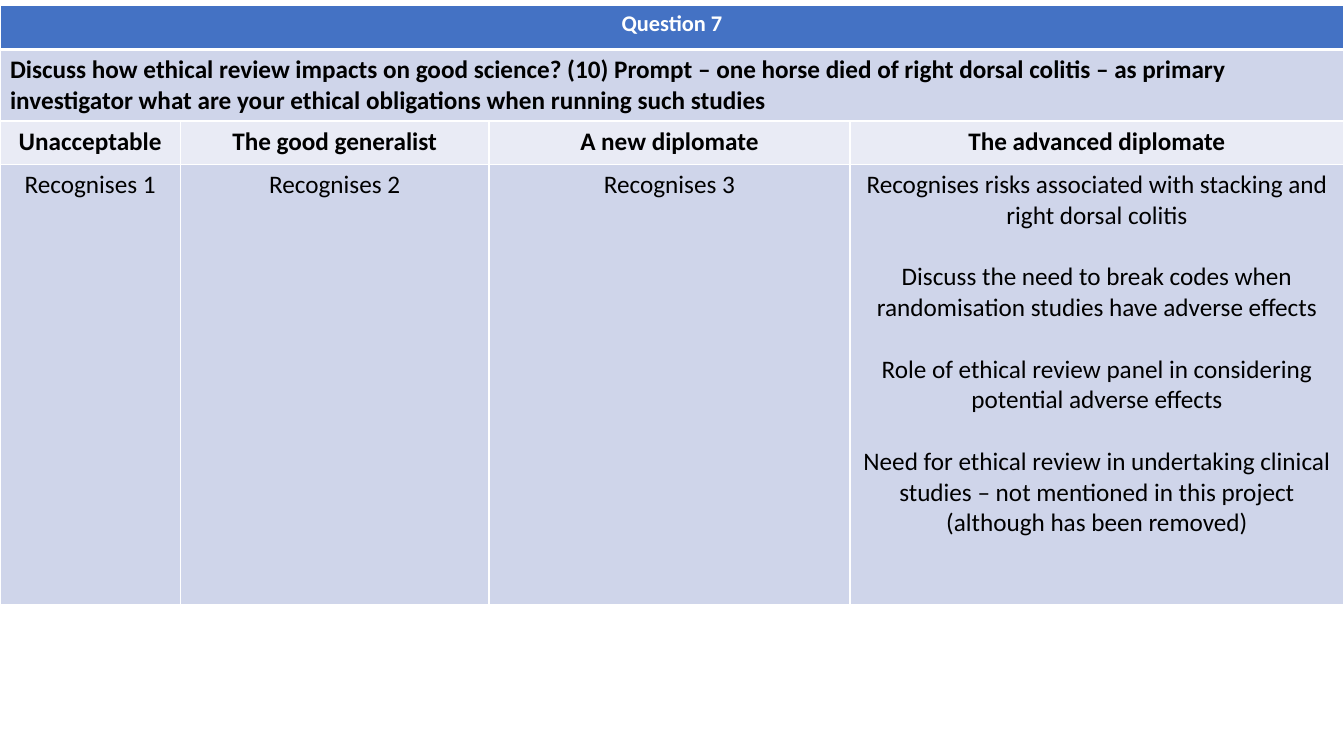
from dataclasses import dataclass

from lxml.etree import SubElement
from pptx import Presentation
from pptx.dml.color import RGBColor
from pptx.enum.text import PP_ALIGN as Align
from pptx.oxml.ns import qn
from pptx.table import _Cell as Cell
from pptx.util import Inches, Pt

COLUMN_WIDTHS = (1.79, 3.06, 3.58, 4.9)
PARAGRAPH_GAP = Pt(22)


@dataclass(frozen=True)
class RubricRow:
    height: float
    fill: str
    cells: tuple[tuple[str, ...], ...]
    size: int = 18
    bold: bool = True
    color: str = "000000"
    align: Align = Align.CENTER
    top_line: int = 1
    bottom_line: int = 1


ROWS = (
    RubricRow(0.44, "4472C4", (("Question 7",),), size=16, color="FFFFFF", bottom_line=3),
    RubricRow(
        0.71, "CFD5EA",
        (("Discuss how ethical review impacts on good science? (10) Prompt – one horse died of "
          "right dorsal colitis – as primary investigator what are your ethical obligations "
          "when running such studies",),),
        align=Align.LEFT, top_line=3,
    ),
    RubricRow(
        0.43, "E9EBF5",
        (("Unacceptable",), ("The good generalist",), ("A new diplomate",),
         ("The advanced diplomate",)),
    ),
    RubricRow(
        4.37, "CFD5EA",
        (("Recognises 1",), ("Recognises 2",), ("Recognises 3",),
         ("Recognises risks associated with stacking and right dorsal colitis",
          "Discuss the need to break codes when randomisation studies have adverse effects",
          "Role of ethical review panel in considering potential adverse effects",
          "Need for ethical review in undertaking clinical studies – not mentioned in this "
          "project (although has been removed)")),
        bold=False,
    ),
)


def rgb(value: str) -> RGBColor:
    return RGBColor.from_string(value)


def style_cell(cell: Cell, row: RubricRow) -> None:
    """Give the cell white borders and the fill of its row."""
    properties = cell._tc.get_or_add_tcPr()
    borders = {"lnL": 1, "lnR": 1, "lnT": row.top_line, "lnB": row.bottom_line}
    for tag, points in borders.items():
        line = SubElement(properties, qn(f"a:{tag}"), w=str(Pt(points)))
        SubElement(SubElement(line, qn("a:solidFill")), qn("a:srgbClr"), val="FFFFFF")
    cell.fill.solid()
    cell.fill.fore_color.rgb = rgb(row.fill)


def write_cell(cell: Cell, paragraphs: tuple[str, ...], row: RubricRow) -> None:
    font_values = {"name": "Calibri", "size": Pt(row.size), "bold": row.bold}
    frame = cell.text_frame
    for index, text in enumerate(paragraphs):
        para = frame.add_paragraph() if index else frame.paragraphs[0]
        para.alignment = row.align
        if index:
            para.space_before = PARAGRAPH_GAP
        span = para.add_run()
        span.text = text
        for name, value in font_values.items():
            setattr(span.font, name, value)
        span.font.color.rgb = rgb(row.color)


def main() -> None:
    deck = Presentation()
    deck.slide_width, deck.slide_height = Inches(13.33), Inches(7.5)
    page = deck.slides.add_slide(deck.slide_layouts[6])
    height = sum(row.height for row in ROWS)
    table = page.shapes.add_table(
        len(ROWS), len(COLUMN_WIDTHS), Inches(0), Inches(0.05), Inches(13.33), Inches(height)
    ).table
    for column, width in zip(table.columns, COLUMN_WIDTHS):
        column.width = Inches(width)
    for index, row in enumerate(ROWS):
        table.rows[index].height = Inches(row.height)
        cells = list(table.rows[index].cells)
        for cell in cells:
            style_cell(cell, row)
        if len(row.cells) == 1:
            cells[0].merge(cells[-1])
        for cell, paragraphs in zip(cells, row.cells):
            write_cell(cell, paragraphs, row)
    deck.save("out.pptx")


if __name__ == "__main__":
    main()
